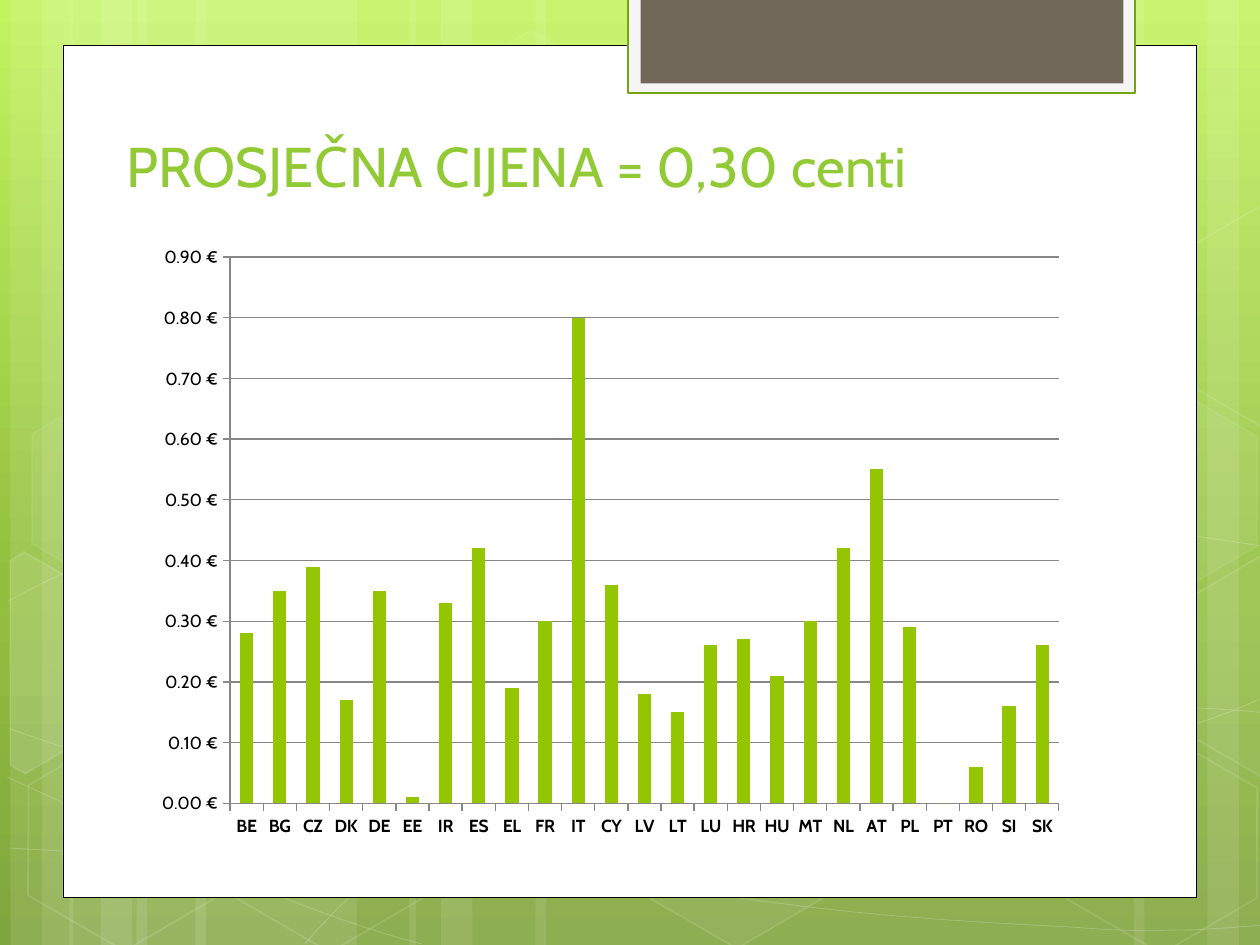
"""Builds a slide with a column chart of average prices by country."""
from copy import deepcopy
from lxml.etree import SubElement
from pptx import Presentation
from pptx.chart.data import CategoryChartData
from pptx.dml.color import RGBColor
from pptx.enum.chart import XL_CHART_TYPE, XL_TICK_MARK
from pptx.enum.shapes import MSO_SHAPE
from pptx.enum.text import MSO_ANCHOR, MSO_AUTO_SIZE, PP_ALIGN
from pptx.oxml.ns import qn
from pptx.util import Pt

HUES = {"white": "FFFFFF", "black": "000000", "tab": "F5F5F5", "edge": "74A510",
        "brown": "71685A", "title": "91CA35", "bar": "94C600", "grid": "878787"}
SKY = [(0, "C3F35F"), (0.62, "93BF3F"), (1, "81A53E")]


def paint(shape, fill=None, line=None, width=1, fade=100, dim=100):
    """Set fill and line, with their opacities in percent."""
    shape.shadow.inherit = False
    for part, hue, alpha, spot in ((shape.fill, fill, fade, "p:spPr"),
                                   (shape.line.fill, line, dim, "p:spPr/a:ln")):
        if not hue:
            part.background()
            continue
        part.solid()
        part.fore_color.rgb = RGBColor.from_string(HUES[hue])
        if alpha < 100:
            clr = shape.element.xpath(spot + "/a:solidFill/a:srgbClr")[0]
            SubElement(clr, qn("a:alpha")).set("val", str(alpha * 1000))
    if line:
        shape.line.width = Pt(width)


def trace(shapes, dots, close):
    """Draw a freeform through the dots."""
    spots = [(Pt(x), Pt(y)) for x, y in dots]
    pen = shapes.build_freeform(*spots[0], scale=1.0)
    pen.add_line_segments(spots[1:], close=close)
    return pen.convert_to_shape()


deck = Presentation()
deck.slide_width, deck.slide_height = Pt(720), Pt(540)
slide = deck.slides.add_slide(deck.slide_layouts[5])
shapes = slide.shapes

back = slide.background.fill
back.gradient()
back.gradient_angle = 270
stops = slide.element.xpath("./p:cSld/p:bg//a:gsLst")[0]
stops.append(deepcopy(stops[-1]))
for stop, (place, hue) in zip(back.gradient_stops, SKY):
    stop.position = place
    stop.color.rgb = RGBColor.from_string(hue)

bands = [(78, 126), (6, 36), (24, 60), (111.6, 126), (39.6, 36), (57.6, 60),
         (528, 126), (690, 36), (648, 60), (306, 222), (234, 36), (252, 60)]
for left, wide in bands:
    band = shapes.add_shape(MSO_SHAPE.RECTANGLE, Pt(left), 0, Pt(wide), Pt(540))
    paint(band, "white", fade=10)

curves = [
    [(5, 484.6), (43.9, 486.7), (82.8, 488.9), (136.8, 488.2),
     (190.8, 487.4), (257.8, 486), (329.8, 478.8),
     (401.8, 471.6), (504, 457.9), (570.2, 444.2),
     (635.8, 430.6), (703.4, 409), (725, 396.7)],
    [(5, 343.4), (25.9, 331.9), (46.8, 321.1), (87.1, 310.3),
     (128.2, 299.5), (186.5, 283.7), (249.8, 278.6),
     (313.9, 273.6), (391.7, 272.9), (470.9, 278.6),
     (550.1, 284.4), (681.8, 306.7), (725, 312.5)],
    [(4.3, 444.2), (91.4, 483.8), (177.8, 523.4), (240.5, 539.3)],
    [(5, 416.2), (27.4, 424.1), (50.4, 432), (92.2, 443.5),
     (133.9, 454.3), (196.6, 472.3), (257, 484.6),
     (316.8, 496.8), (392.4, 509.8), (452.2, 517),
     (511.9, 524.9), (576, 527.8), (614.2, 529.9),
     (651.6, 532.8), (661.7, 531.4), (680.4, 531.4),
     (699.1, 530.6), (712.1, 529.2), (725, 528.5)],
    [(174.2, 539.3), (187.2, 524.9), (200.2, 510.5), (217.4, 497.5),
     (234.7, 484.6), (259.2, 470.2), (279.4, 460.1),
     (299.5, 450), (311.8, 445.7), (338.4, 438.5),
     (364.3, 431.3), (412.6, 421.2), (437.8, 416.2),
     (463.7, 411.1), (467.3, 411.1), (489.6, 409.7),
     (511.9, 407.5), (547.2, 405.4), (571.7, 404.6),
     (596.9, 403.9), (637.9, 404.6), (637.9, 404.6),
     (654, 404.6), (670, 404.6), (686.2, 404.6),
     (699.1, 405.4), (711.4, 406.1), (717.8, 406.8),
     (724.3, 407.5), (722.2, 406.8), (724.3, 407.5)],
]
for knots in curves:
    curve = trace(shapes, knots, False)
    route = curve.element.xpath(".//a:path")[0]
    legs = route.findall(qn("a:lnTo"))
    for i in range(0, len(legs), 3):
        bend = SubElement(route, qn("a:cubicBezTo"))
        for leg in legs[i:i + 3]:
            bend.append(leg[0])
            route.remove(leg)
    paint(curve, line="white", width=0.5, dim=20)

cells = [(240.5, 25.9, 4, 8), (357.8, 424.1, 6, 12), (7.9, 425.5, 0, 12), (10.1, 224.6, 7, 8),
         (125.3, 426.2, 0, 12), (600.5, 427, 0, 12), (600.5, 226.1, 7, 8)]
for left, top, fade, dim in cells:
    cell = shapes.add_shape(MSO_SHAPE.HEXAGON, Pt(left), Pt(top), Pt(126), Pt(109.4))
    cell.adjustments[0] = 0.285
    cell.rotation = 30
    paint(cell, "white" if fade else None, "white", 1, fade, dim)

chips = [
    (10, [(5.8, 320.4), (13.7, 315.4), (69.1, 347), (68.4, 410.4), (14.4, 442.1), (5.8, 437)]),
    (4, [(666.7, 349.2), (720.7, 317.5), (726.5, 321.1), (726.5, 441.4), (721.4, 444.2), (666.7, 412.6)]),
    (0, [(666.7, 149), (720.7, 117.4), (727.2, 121), (726.5, 241.2), (721.4, 244.1), (666.7, 212.4)]),
]
for fade, dots in chips:
    paint(trace(shapes, dots, True), "white" if fade else None, "white", 1, fade, 12)

panels = [((36, 25.9, 648, 487), "white", "black", 0.5),
          ((359, -1.4, 289.6, 54.7), "tab", "edge", 1.25),
          ((366.1, -1.4, 275.9, 49), "brown", None, 0)]
for box, fill, line, width in panels:
    panel = shapes.add_shape(MSO_SHAPE.RECTANGLE, *map(Pt, box))
    paint(panel, fill, line, width)

title = shapes.title
title.left, title.top, title.width, title.height = map(Pt, (65.2, 54.7, 561.6, 62.6))
frame = title.text_frame
frame.auto_size = MSO_AUTO_SIZE.NONE
frame.word_wrap = True
frame.vertical_anchor = MSO_ANCHOR.BOTTOM
para = frame.paragraphs[0]
para.alignment = PP_ALIGN.LEFT
run = para.add_run()
run.text = "PROSJEČNA CIJENA = 0,30 centi"
run.font.name, run.font.size = "Cabin", Pt(32)
run.font.color.rgb = RGBColor.from_string(HUES["title"])
shapes.element.append(title.element)

data = CategoryChartData()
data.categories = "BE BG CZ DK DE EE IR ES EL FR IT CY LV LT LU HR HU MT NL AT PL PT RO SI SK".split()
data.add_series("Series 1", [
    0.28, 0.35, 0.39, 0.17, 0.35, 0.01, 0.33, 0.42, 0.19, 0.3, 0.8, 0.36, 0.18,
    0.15, 0.26, 0.27, 0.21, 0.3, 0.42, 0.55, 0.29, 0, 0.06, 0.16, 0.26])
left, top, wide, high = 82.1, 133.9, 533.5, 351.4
chart = shapes.add_chart(XL_CHART_TYPE.COLUMN_STACKED, *map(Pt, (left, top, wide, high)), data).chart
chart.has_legend = chart.has_title = False
chart.font.name, chart.font.size = "League Spartan", Pt(18)
chart.font.color.rgb = RGBColor.from_string(HUES["black"])
plot = chart.plots[0]
plot.gap_width, plot.overlap, plot.vary_by_categories = 150, 100, False
bars = plot.series[0].format.fill
bars.solid()
bars.fore_color.rgb = RGBColor.from_string(HUES["bar"])

worth = chart.value_axis
worth.minimum_scale, worth.maximum_scale, worth.major_unit = 0, 0.9, 0.1
worth.has_major_gridlines = True
worth.tick_labels.number_format = "#,##0.00\\ [$€-1];[Red]\\-#,##0.00\\ [$€-1]"
worth.tick_labels.number_format_is_linked = False
for axis, bold in ((chart.category_axis, True), (worth, False)):
    axis.major_tick_mark = XL_TICK_MARK.OUTSIDE
    font = axis.tick_labels.font
    font.name, font.size, font.bold = "Cabin", Pt(10), bold
    font.color.rgb = RGBColor.from_string(HUES["black"])
for rule in (chart.category_axis, worth, worth.major_gridlines):
    rule.format.line.width = Pt(0.75)
    rule.format.line.color.rgb = RGBColor.from_string(HUES["grid"])

area = chart.element.xpath(".//c:plotArea")[0]
for old in area.findall(qn("c:layout")):
    area.remove(old)
layout = SubElement(area, qn("c:layout"))
area.insert(0, layout)
manual = SubElement(layout, qn("c:manualLayout"))
for tag, val in (("layoutTarget", "inner"), ("xMode", "edge"), ("yMode", "edge"),
                 ("x", (131.5 - left) / wide), ("y", (146.9 - top) / high),
                 ("w", 473.6 / wide), ("h", 312.2 / high)):
    SubElement(manual, qn("c:" + tag)).set("val", str(val))

deck.save("out.pptx")
